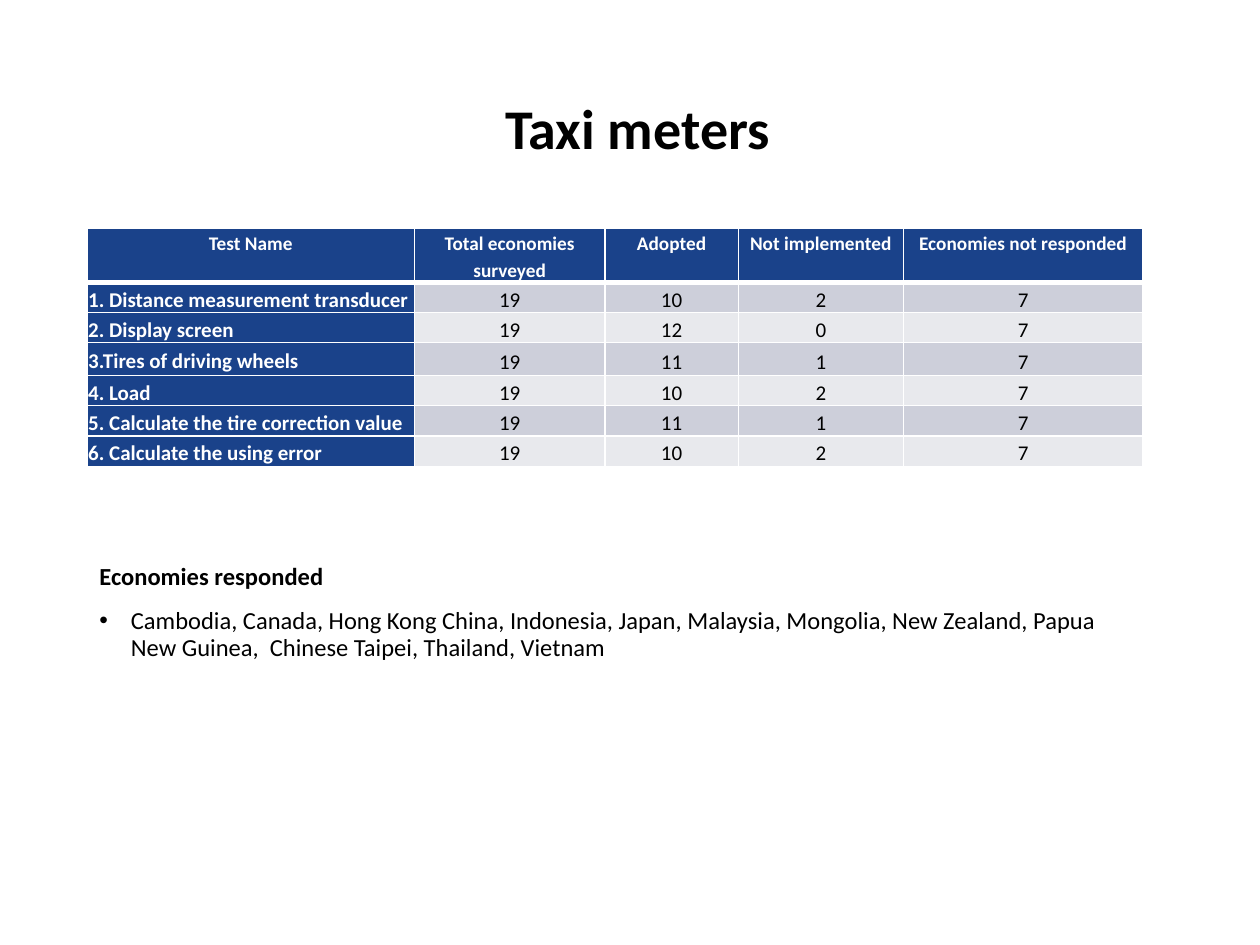
from lxml import etree
from pptx import Presentation
from pptx.dml.color import RGBColor
from pptx.enum.text import MSO_ANCHOR, PP_ALIGN
from pptx.oxml.ns import qn
from pptx.util import Inches, Pt

LEFT, CENTER = PP_ALIGN.LEFT, PP_ALIGN.CENTER
TOP, MIDDLE, BOTTOM = MSO_ANCHOR.TOP, MSO_ANCHOR.MIDDLE, MSO_ANCHOR.BOTTOM

BLUE, WHITE, BLACK = "1A428A", "FFFFFF", "000000"
BANDS = ("CDCFDA", "E8E9ED")

HEADINGS = ("Test Name", "Total economies surveyed", "Adopted",
            "Not implemented", "Economies not responded")
SURVEY = (
    ("1. Distance measurement transducer", 19, 10, 2, 7),
    ("2. Display screen", 19, 12, 0, 7),
    ("3.Tires of driving wheels", 19, 11, 1, 7),
    ("4. Load", 19, 10, 2, 7),
    ("5. Calculate the tire correction value", 19, 11, 1, 7),
    ("6. Calculate the using error", 19, 10, 2, 7),
)
COLUMN_WIDTHS = (2.6, 1.51, 1.06, 1.31, 1.9)
ROW_HEIGHTS = (0.43, 0.24, 0.24, 0.26, 0.24, 0.24, 0.24)
ECONOMIES = ("Cambodia, Canada, Hong Kong China, Indonesia, Japan, Malaysia, "
             "Mongolia, New Zealand, Papua New Guinea,  Chinese Taipei, "
             "Thailand, Vietnam")


def rgb(value):
    return RGBColor.from_string(value)


def write(paragraph, text, *, size, color=BLACK, bold=False, align=LEFT,
          line=0.9, before=None, bullet=None, font="Calibri"):
    if bullet:
        properties = paragraph._p.get_or_add_pPr()
        properties.set("marL", str(Inches(0.25)))
        properties.set("indent", str(Inches(-0.25)))
        etree.SubElement(properties, qn("a:buFont"), typeface="Arial")
        etree.SubElement(properties, qn("a:buChar"), char=bullet)
    paragraph.alignment = align
    paragraph.line_spacing = line
    if before is not None:
        paragraph.space_before = Pt(before)
    run = paragraph.add_run()
    run.text = text
    run.font.name = font
    run.font.size = Pt(size)
    run.font.bold = bold
    run.font.color.rgb = rgb(color)


def set_borders(cell, color, **widths):
    """Draw cell edges; widths in points are keyed L, R, T and B."""
    properties = cell._tc.get_or_add_tcPr()
    for position, side in enumerate("LRTB"):
        edge = etree.Element(qn("a:ln" + side), w=str(Pt(widths.get(side, 1))))
        fill = etree.SubElement(edge, qn("a:solidFill"))
        etree.SubElement(fill, qn("a:srgbClr"), val=color)
        properties.insert(position, edge)


class SurveySlide:
    def __init__(self, presentation):
        self.slide = presentation.slides.add_slide(presentation.slide_layouts[6])

    def text_box(self, left, top, width, height, anchor=TOP):
        box = self.slide.shapes.add_textbox(
            Inches(left), Inches(top), Inches(width), Inches(height))
        frame = box.text_frame
        frame.word_wrap = True
        frame.vertical_anchor = anchor
        return frame

    def cell(self, cell, text, *, fill, anchor, insets, borders, **style):
        cell.fill.solid()
        cell.fill.fore_color.rgb = rgb(fill)
        cell.vertical_anchor = anchor
        (cell.margin_left, cell.margin_top,
         cell.margin_right, cell.margin_bottom) = map(Inches, insets)
        set_borders(cell, WHITE, **borders)
        write(cell.text_frame.paragraphs[0], str(text), line=1.15, **style)

    def table(self, left, top, widths, heights, headings, records):
        table = self.slide.shapes.add_table(
            len(heights), len(widths), Inches(left), Inches(top),
            Inches(sum(widths)), Inches(sum(heights))).table
        for column, width in zip(table.columns, widths):
            column.width = Inches(width)
        for row, height in zip(table.rows, heights):
            row.height = Inches(height)

        for c, heading in enumerate(headings):
            self.cell(table.cell(0, c), heading, fill=BLUE, anchor=TOP,
                      insets=(0.07, 0, 0.07, 0), borders={"B": 3},
                      size=11, color=WHITE, bold=True, align=CENTER)
        for r, (test, *counts) in enumerate(records, 1):
            shared = {"insets": (0.01, 0.01, 0.01, 0), "size": 12,
                      "borders": {"T": 3} if r == 1 else {}}
            self.cell(table.cell(r, 0), test, fill=BLUE, anchor=MIDDLE,
                      color=WHITE, bold=True, **shared)
            for c, count in enumerate(counts, 1):
                self.cell(table.cell(r, c), count, fill=BANDS[(r - 1) % 2],
                          anchor=BOTTOM, align=CENTER, **shared)


def main():
    presentation = Presentation()
    presentation.slide_width = Inches(10)
    presentation.slide_height = Inches(7.5)
    survey = SurveySlide(presentation)

    title = survey.text_box(0.7, 0.54, 8.62, 1, MIDDLE)
    write(title.paragraphs[0], " Taxi meters", size=32, bold=True, align=CENTER)

    survey.table(0.69, 1.81, COLUMN_WIDTHS, ROW_HEIGHTS, HEADINGS, SURVEY)

    responses = survey.text_box(0.69, 4.43, 8.51, 1.99)
    write(responses.paragraphs[0], "Economies responded", size=14, bold=True)
    write(responses.add_paragraph(), ECONOMIES, size=14, before=10, bullet="•")

    presentation.save("out.pptx")


if __name__ == "__main__":
    main()
